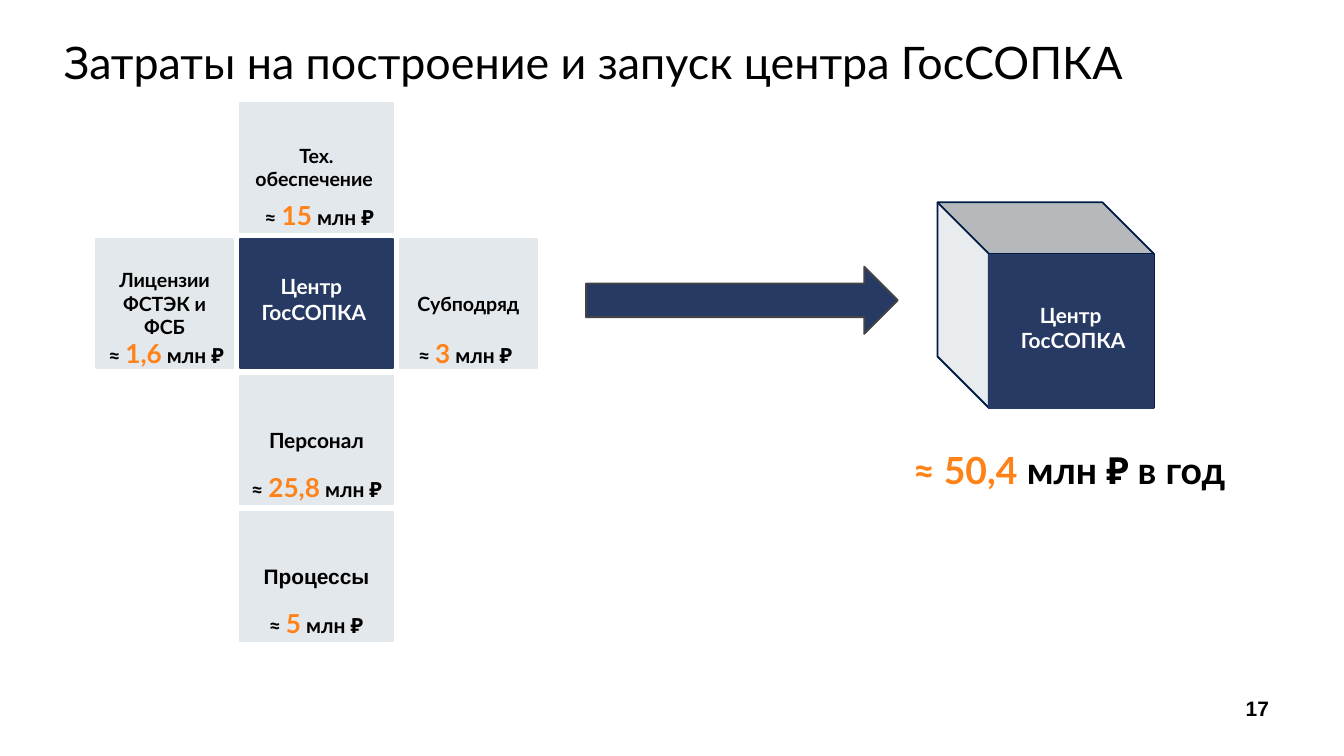
from dataclasses import dataclass

from pptx import Presentation
from pptx.dml.color import RGBColor
from pptx.enum.shapes import MSO_SHAPE
from pptx.enum.text import MSO_ANCHOR, PP_ALIGN
from pptx.util import Emu, Pt

PX = 4572
SLIDE_W, SLIDE_H = 2000, 1125
COLORS = {
    "navy": "273A64",
    "tile": "E3E8EC",
    "edge": "001C45",
    "arrow_edge": "444444",
    "accent": "FF8218",
    "black": "000000",
    "white": "FFFFFF",
}
COL_X = (143, 357, 595)
COL_W = (204, 228, 204)
ROW_Y, ROW_PITCH, TILE_H = 153, 203, 192


@dataclass
class Box:
    x: int
    y: int
    w: int
    h: int


@dataclass
class Run:
    text: str
    size: float
    color: str = "black"


@dataclass
class Tile:
    col: int
    row: int
    lines: tuple[str, ...]
    size: float
    amount: str
    amount_box: Box
    font: str = "Lato"


TILES = (
    Tile(2, 1, ("Субподряд",), 10.5, "3", Box(600, 492, 192, 68)),
    Tile(1, 2, ("Персонал",), 11.2, "25,8", Box(351, 692, 248, 68)),
    Tile(0, 1, ("Лицензии", "ФСТЭК и ФСБ"), 10.5, "1,6", Box(138, 492, 218, 68)),
    Tile(1, 0, ("Тех.", "обеспечение "), 10.5, "15", Box(371, 287, 208, 68)),
    Tile(1, 3, ("Процессы",), 11.2, "5", Box(377, 894, 194, 68), "Arial"),
)


def rgb(name: str) -> RGBColor:
    return RGBColor.from_string(COLORS[name])


def emu(box: Box) -> tuple[Emu, ...]:
    return tuple(Emu(v * PX) for v in (box.x, box.y, box.w, box.h))


def grid_box(col: int, row: int) -> Box:
    return Box(COL_X[col], ROW_Y + row * ROW_PITCH, COL_W[col], TILE_H)


def write(sp, paragraphs, *, font="Lato", bold=True, wrap=True,
          align=PP_ALIGN.CENTER, anchor=MSO_ANCHOR.TOP, spacing=None, left=None):
    tf = sp.text_frame
    tf.word_wrap = wrap
    tf.vertical_anchor = anchor
    if left is not None:
        tf.margin_left = Emu(left * PX)
    for i, runs in enumerate(paragraphs):
        p = tf.add_paragraph() if i else tf.paragraphs[0]
        p.alignment = align
        if spacing:
            p.line_spacing = spacing
        for run in runs:
            r = p.add_run()
            r.text = run.text
            r.font.name = font
            r.font.size = Pt(run.size)
            r.font.bold = bold
            r.font.color.rgb = rgb(run.color)


def add_text(s, box: Box, paragraphs, **fmt):
    write(s.shapes.add_textbox(*emu(box)), paragraphs, **fmt)


def add_block(s, kind: MSO_SHAPE, box: Box, fill: str, line: str):
    sp = s.shapes.add_shape(kind, *emu(box))
    sp.shadow.inherit = False
    sp.fill.solid()
    sp.fill.fore_color.rgb = rgb(fill)
    sp.line.color.rgb = rgb(line)
    sp.line.width = Pt(1)
    return sp


def add_center_label(s, x: int, y: int):
    lines = ("Центр ", "ГосСОПКА")
    add_text(s, Box(x, y, 222, 96), [[Run(t, 11.2, "white")] for t in lines])


def add_tile(s, tile: Tile):
    sp = add_block(s, MSO_SHAPE.RECTANGLE, grid_box(tile.col, tile.row), "tile", "tile")
    write(sp, [[Run(t, tile.size)] for t in tile.lines],
          font=tile.font, anchor=MSO_ANCHOR.MIDDLE)


def add_amount(s, tile: Tile):
    runs = [Run("≈ ", 11.2), Run(tile.amount, 14, "accent"), Run(" млн ₽ ", 11.2)]
    add_text(s, tile.amount_box, [runs], wrap=False)


def main():
    prs = Presentation()
    prs.slide_width, prs.slide_height = Emu(SLIDE_W * PX), Emu(SLIDE_H * PX)
    s = prs.slides.add_slide(prs.slide_layouts[6])

    add_text(s, Box(1832, 1026, 78, 58), [[Run("17", 11.2)]], font="Arial", wrap=False)
    add_text(s, Box(95, 51, 1798, 94),
             [[Run("Затраты на построение и запуск центра ГосСОПКА", 24)]],
             bold=False, align=PP_ALIGN.LEFT, spacing=0.9, left=0)

    add_block(s, MSO_SHAPE.RECTANGLE, grid_box(1, 1), "navy", "navy")
    for tile in TILES:
        add_tile(s, tile)
    add_center_label(s, 356, 398)

    add_block(s, MSO_SHAPE.RIGHT_ARROW, Box(872, 397, 464, 100), "navy", "arrow_edge")
    cube = add_block(s, MSO_SHAPE.CUBE, Box(1403, 293, 306, 322), "tile", "edge")
    cube.rotation = 270
    add_block(s, MSO_SHAPE.RECTANGLE, Box(1472, 379, 244, 228), "navy", "navy")
    add_center_label(s, 1486, 440)

    for tile in TILES:
        add_amount(s, tile)
    add_text(s, Box(1328, 656, 540, 88),
             [[Run("≈ 50,4 ", 20, "accent"), Run("млн ₽ в год ", 20)]], wrap=False)

    prs.save("out.pptx")


if __name__ == "__main__":
    main()
